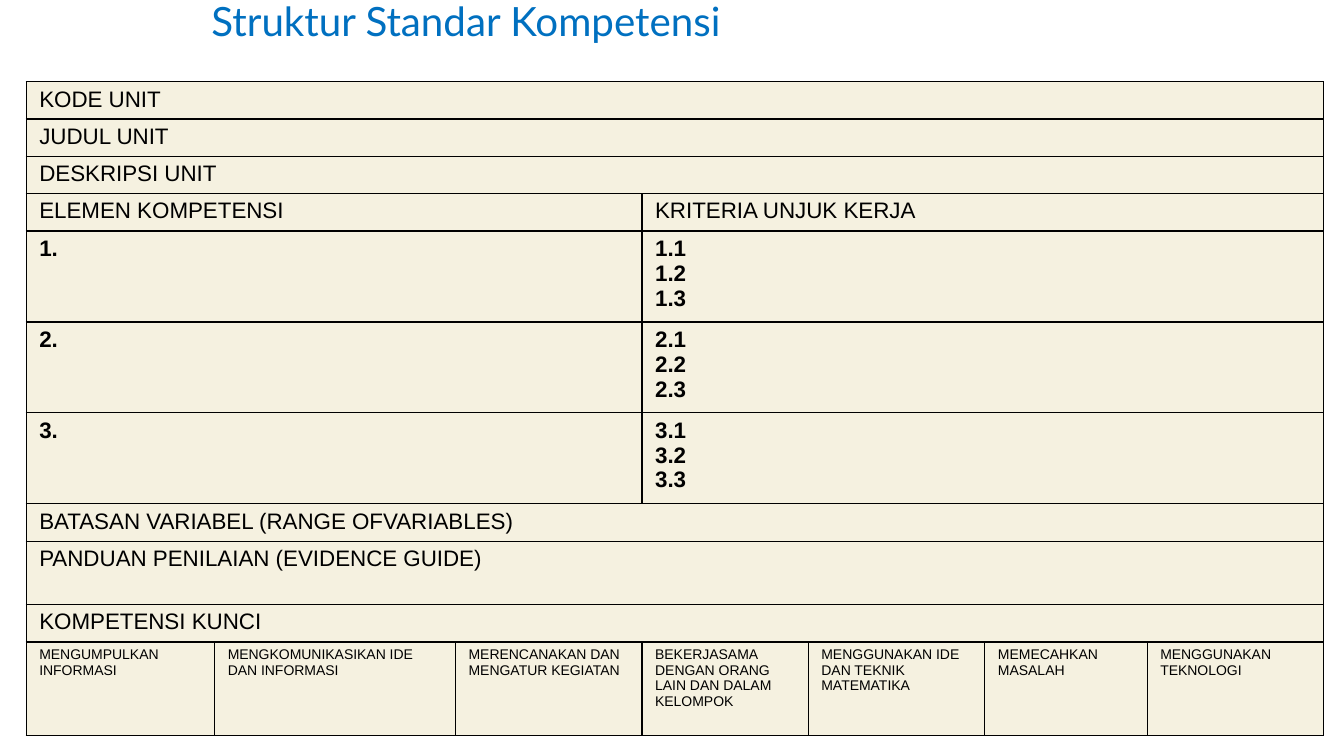
import lxml.etree
import pptx
import pptx.dml.color
import pptx.enum.text
import pptx.oxml.ns
import pptx.util

Cm = pptx.util.Cm
Pt = pptx.util.Pt
RGBColor = pptx.dml.color.RGBColor
qn = pptx.oxml.ns.qn


class Theme:
    title_font = "Lato"
    table_font = "Arial"
    title_color = RGBColor.from_string("0070C0")
    text_color = RGBColor.from_string("000000")
    cell_color = RGBColor.from_string("F5F1E0")
    border_color = "000000"
    border_width = Pt(1)
    title_size = Pt(28.8)
    body_size = Pt(16)
    small_size = Pt(10)


def write_text(frame, text, font=Theme.table_font, size=Theme.body_size,
               color=Theme.text_color, bold=False, line_spacing=None):
    """Fill a text frame, one paragraph per line of text."""
    frame.word_wrap = True
    frame.text = text
    for paragraph in frame.paragraphs:
        paragraph.line_spacing = line_spacing
        for run in paragraph.runs:
            run.font.name = font
            run.font.size = size
            run.font.bold = bold
            run.font.color.rgb = color


def style_cell(cell):
    """Give a cell its margins, borders and fill."""
    cell.margin_left = cell.margin_right = Cm(0.33)
    cell.margin_top = cell.margin_bottom = Cm(0.13)
    properties = cell._tc.get_or_add_tcPr()
    for side in ("a:lnL", "a:lnR", "a:lnT", "a:lnB"):
        line = lxml.etree.SubElement(properties, qn(side), w=str(Theme.border_width))
        fill = lxml.etree.SubElement(line, qn("a:solidFill"))
        lxml.etree.SubElement(fill, qn("a:srgbClr"), val=Theme.border_color)
    cell.fill.solid()
    cell.fill.fore_color.rgb = Theme.cell_color


presentation = pptx.Presentation()
presentation.slide_width = Cm(33.87)
presentation.slide_height = Cm(19.05)
slide = presentation.slides.add_slide(presentation.slide_layouts[6])

# Title
title = slide.shapes.add_textbox(Cm(5.08), Cm(0), Cm(27.94), Cm(1.17))
title.text_frame.vertical_anchor = pptx.enum.text.MSO_ANCHOR.MIDDLE
write_text(title.text_frame, "Struktur Standar Kompetensi", font=Theme.title_font,
           size=Theme.title_size, color=Theme.title_color, line_spacing=0.9)

# Table content: one text spans the row, two split it after the third column
key_competencies = [
    "MENGUMPULKAN INFORMASI",
    "MENGKOMUNIKASIKAN IDE DAN INFORMASI",
    "MERENCANAKAN DAN MENGATUR KEGIATAN",
    "BEKERJASAMA DENGAN ORANG LAIN DAN DALAM KELOMPOK",
    "MENGGUNAKAN IDE DAN TEKNIK MATEMATIKA",
    "MEMECAHKAN MASALAH",
    "MENGGUNAKAN TEKNOLOGI",
]
elements = [[f"{number}.", "\n".join(f"{number}.{part}" for part in (1, 2, 3))]
            for number in (1, 2, 3)]
rows = [
    ["KODE UNIT"],
    ["JUDUL UNIT"],
    ["DESKRIPSI UNIT"],
    ["ELEMEN KOMPETENSI", "KRITERIA UNJUK KERJA"],
    *elements,
    ["BATASAN VARIABEL (RANGE OFVARIABLES)"],
    ["PANDUAN PENILAIAN (EVIDENCE GUIDE)"],
    ["KOMPETENSI KUNCI"],
    key_competencies,
]
starts_by_count = {1: [0], 2: [0, 3], 7: list(range(7))}
column_widths = [4.75, 6.07, 4.7, 4.19, 4.45, 4.09, 4.45]
row_heights = [0.94] * 4 + [2.29] * 3 + [0.94, 1.6, 0.94, 2.36]

# Table grid
table = slide.shapes.add_table(
    len(rows), len(column_widths), Cm(0.66), Cm(2.06),
    Cm(sum(column_widths)), Cm(sum(row_heights))).table
table.first_row = False
table.horz_banding = False
for column, width in zip(table.columns, column_widths):
    column.width = Cm(width)
for row, height in zip(table.rows, row_heights):
    row.height = Cm(height)
for cell in table.iter_cells():
    style_cell(cell)

# Table text
for row_index, texts in enumerate(rows):
    starts = starts_by_count[len(texts)]
    ends = starts[1:] + [len(column_widths)]
    for text, start, end in zip(texts, starts, ends):
        cell = table.cell(row_index, start)
        if end - start > 1:
            cell.merge(table.cell(row_index, end - 1))
        write_text(cell.text_frame, text, bold=texts in elements,
                   size=Theme.small_size if texts is key_competencies else Theme.body_size)

# Hanging indent of the element numbers
for row_index, texts in enumerate(rows):
    if texts in elements:
        paragraph = table.cell(row_index, 0).text_frame.paragraphs[0]
        paragraph_properties = paragraph._p.get_or_add_pPr()
        paragraph_properties.set("marL", str(Cm(1.47)))
        paragraph_properties.set("indent", str(-Cm(1.47)))

presentation.save("out.pptx")
